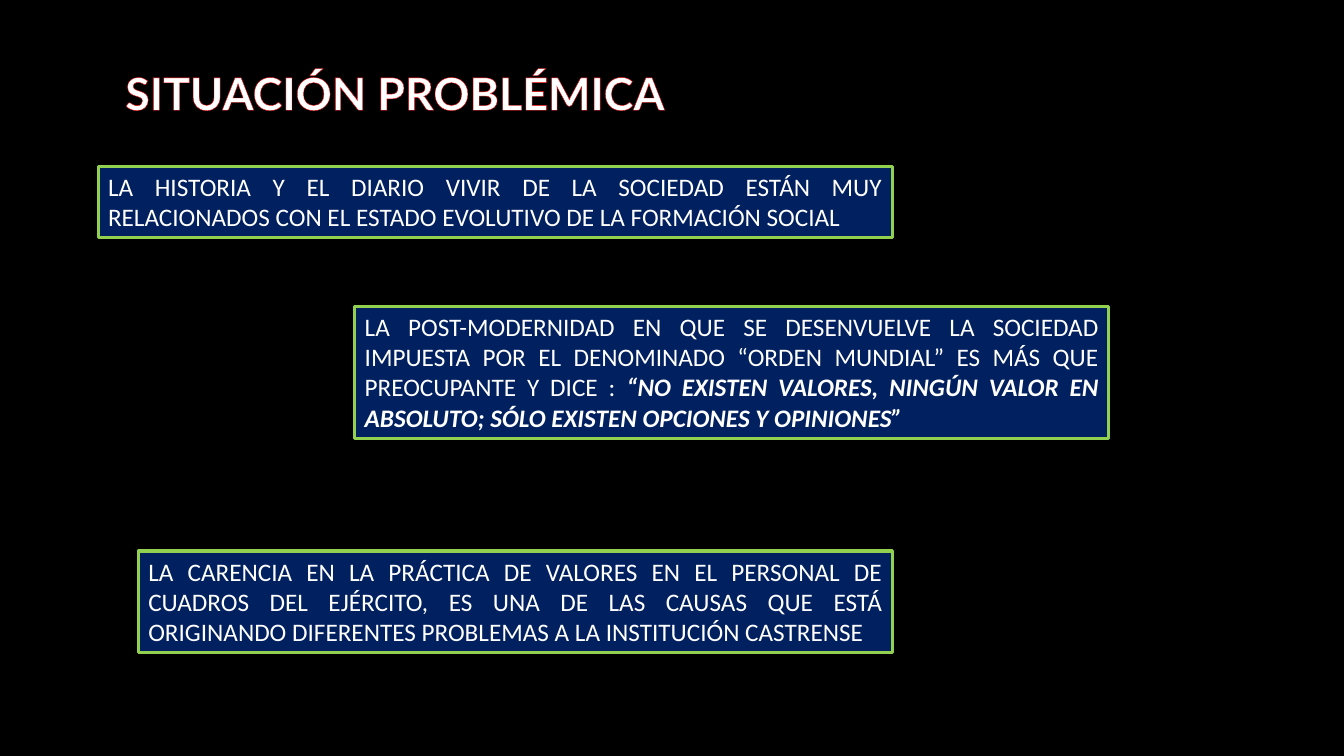
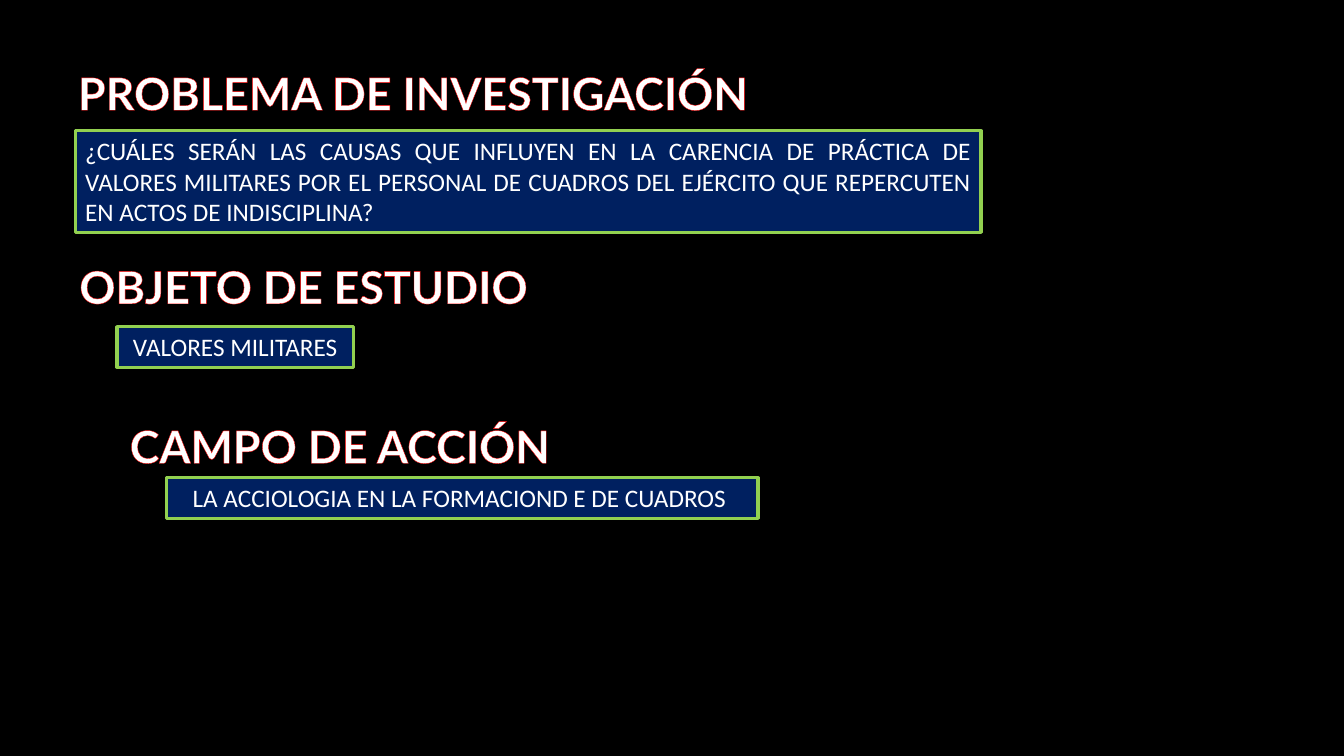
from dataclasses import dataclass

from pptx import Presentation
from pptx.dml.color import RGBColor
from pptx.enum.shapes import MSO_SHAPE
from pptx.enum.text import MSO_ANCHOR, MSO_AUTO_SIZE, PP_ALIGN
from pptx.oxml import parse_xml
from pptx.oxml.ns import nsdecls
from pptx.util import Inches, Pt


@dataclass(frozen=True)
class Theme:
    background: str = "000000"
    text: str = "FFFFFF"
    panel: str = "002060"
    border: str = "92D050"
    outline: str = "FF0000"
    heading_font: str = "Lato"
    body_font: str = "Calibri"
    heading_size: int = 32
    body_size: int = 18
    border_width: float = 2.25
    outline_width: float = 1.5


THEME = Theme()
WIDTH, HEIGHT = Inches(13.33), Inches(7.5)
HEADING_HEIGHT = 8.5
LINE_HEIGHT = 4.04
PANEL_PADDING = 1.33


def color(value):
    return RGBColor.from_string(value)


def area(left, top, width, height):
    """Turn percentages of the slide into lengths."""
    return (int(WIDTH * left / 100), int(HEIGHT * top / 100),
            int(WIDTH * width / 100), int(HEIGHT * height / 100))


def add_page(deck):
    page = deck.slides.add_slide(deck.slide_layouts[6])
    fill = page.background.fill
    fill.solid()
    fill.fore_color.rgb = color(THEME.background)
    return page


def write(box, texts, align, font_name, size):
    """Fill a box with one paragraph and return its spans."""
    frame = box.text_frame
    frame.word_wrap = True
    frame.auto_size = MSO_AUTO_SIZE.SHAPE_TO_FIT_TEXT
    frame.vertical_anchor = MSO_ANCHOR.TOP
    para = frame.paragraphs[0]
    para.alignment = align
    spans = []
    for text in texts:
        span = para.add_run()
        span.text = text
        span.font.name = font_name
        span.font.size = Pt(size)
        span.font.color.rgb = color(THEME.text)
        spans.append(span)
    return spans


def outline_letters(span):
    line = parse_xml(
        f'<a:ln {nsdecls("a")} w="{Pt(THEME.outline_width)}"><a:solidFill>'
        f'<a:srgbClr val="{THEME.outline}"/></a:solidFill></a:ln>')
    span._r.get_or_add_rPr().insert(0, line)


def add_heading(page, text, left, top, width):
    box = page.shapes.add_textbox(*area(left, top, width, HEADING_HEIGHT))
    span, = write(box, [text], PP_ALIGN.CENTER, THEME.heading_font, THEME.heading_size)
    span.font.bold = True
    outline_letters(span)


def add_panel(page, text, left, top, width, lines, quote=None, align=PP_ALIGN.JUSTIFY):
    """Add a framed panel whose height follows from its number of text lines."""
    height = PANEL_PADDING + LINE_HEIGHT * lines
    box = page.shapes.add_shape(MSO_SHAPE.RECTANGLE, *area(left, top, width, height))
    box.shadow.inherit = False
    box.fill.solid()
    box.fill.fore_color.rgb = color(THEME.panel)
    box.line.color.rgb = color(THEME.border)
    box.line.width = Pt(THEME.border_width)
    texts = [text, quote] if quote else [text]
    spans = write(box, texts, align, THEME.body_font, THEME.body_size)
    for span in spans[1:]:
        span.font.bold = span.font.italic = True


def build_situation(deck):
    page = add_page(deck)
    add_heading(page, "SITUACIÓN PROBLÉMICA", 4.4, 8, 50)
    add_panel(page, "LA HISTORIA Y EL DIARIO VIVIR DE LA SOCIEDAD ESTÁN MUY "
              "RELACIONADOS CON EL ESTADO EVOLUTIVO DE LA FORMACIÓN SOCIAL",
              7.3, 22, 59.1, lines=2)
    add_panel(page, "LA POST-MODERNIDAD EN QUE SE DESENVUELVE LA SOCIEDAD IMPUESTA "
              "POR EL DENOMINADO “ORDEN MUNDIAL” ES MÁS QUE PREOCUPANTE Y DICE : ",
              26.4, 40.5, 56.1, lines=4,
              quote="“NO EXISTEN VALORES, NINGÚN VALOR EN ABSOLUTO; "
              "SÓLO EXISTEN OPCIONES Y OPINIONES”")
    add_panel(page, "LA CARENCIA EN LA PRÁCTICA DE VALORES EN EL PERSONAL DE CUADROS "
              "DEL EJÉRCITO, ES UNA DE LAS CAUSAS QUE ESTÁ ORIGINANDO DIFERENTES "
              "PROBLEMAS A LA INSTITUCIÓN CASTRENSE",
              10.3, 72.9, 56.1, lines=3)


def build_research_problem(deck):
    page = add_page(deck)
    add_heading(page, "PROBLEMA DE INVESTIGACIÓN", 4.4, 8, 52.7)
    add_panel(page, "¿CUÁLES SERÁN LAS CAUSAS QUE INFLUYEN EN LA CARENCIA DE PRÁCTICA "
              "DE VALORES MILITARES POR EL PERSONAL DE CUADROS DEL EJÉRCITO QUE "
              "REPERCUTEN EN ACTOS DE INDISCIPLINA?",
              5.6, 17.3, 67.4, lines=3)
    add_heading(page, "OBJETO DE ESTUDIO", 0, 33.6, 45.2)
    add_panel(page, "VALORES MILITARES", 8.7, 43.2, 17.6, lines=1, align=PP_ALIGN.CENTER)
    add_heading(page, "CAMPO DE ACCIÓN", 0, 54.7, 50.6)
    add_panel(page, "LA ACCIOLOGIA EN LA FORMACIOND E DE CUADROS ",
              12.4, 63.2, 44, lines=1, align=PP_ALIGN.CENTER)


def main():
    deck = Presentation()
    deck.slide_width, deck.slide_height = WIDTH, HEIGHT
    build_situation(deck)
    build_research_problem(deck)
    deck.save("out.pptx")


if __name__ == "__main__":
    main()
